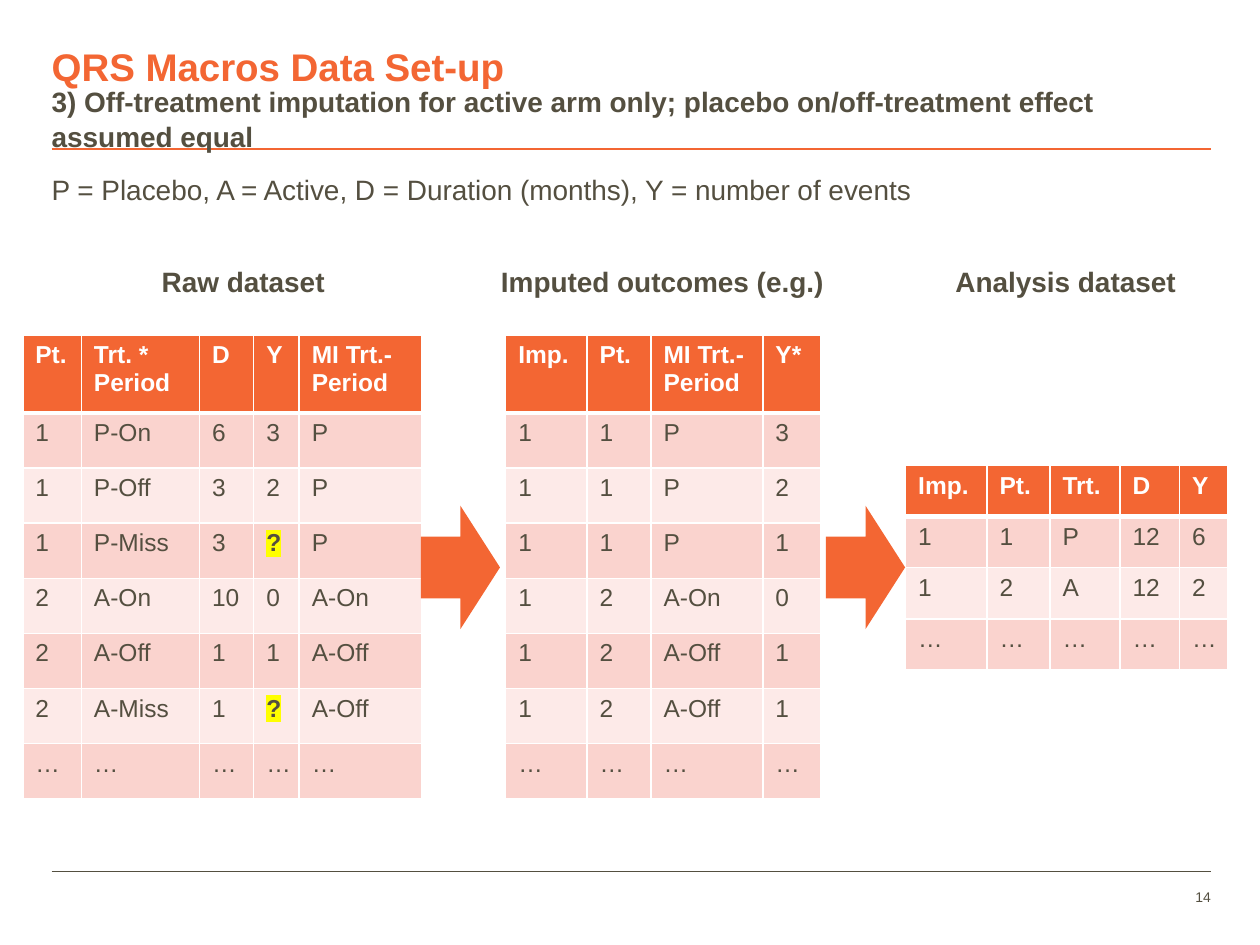
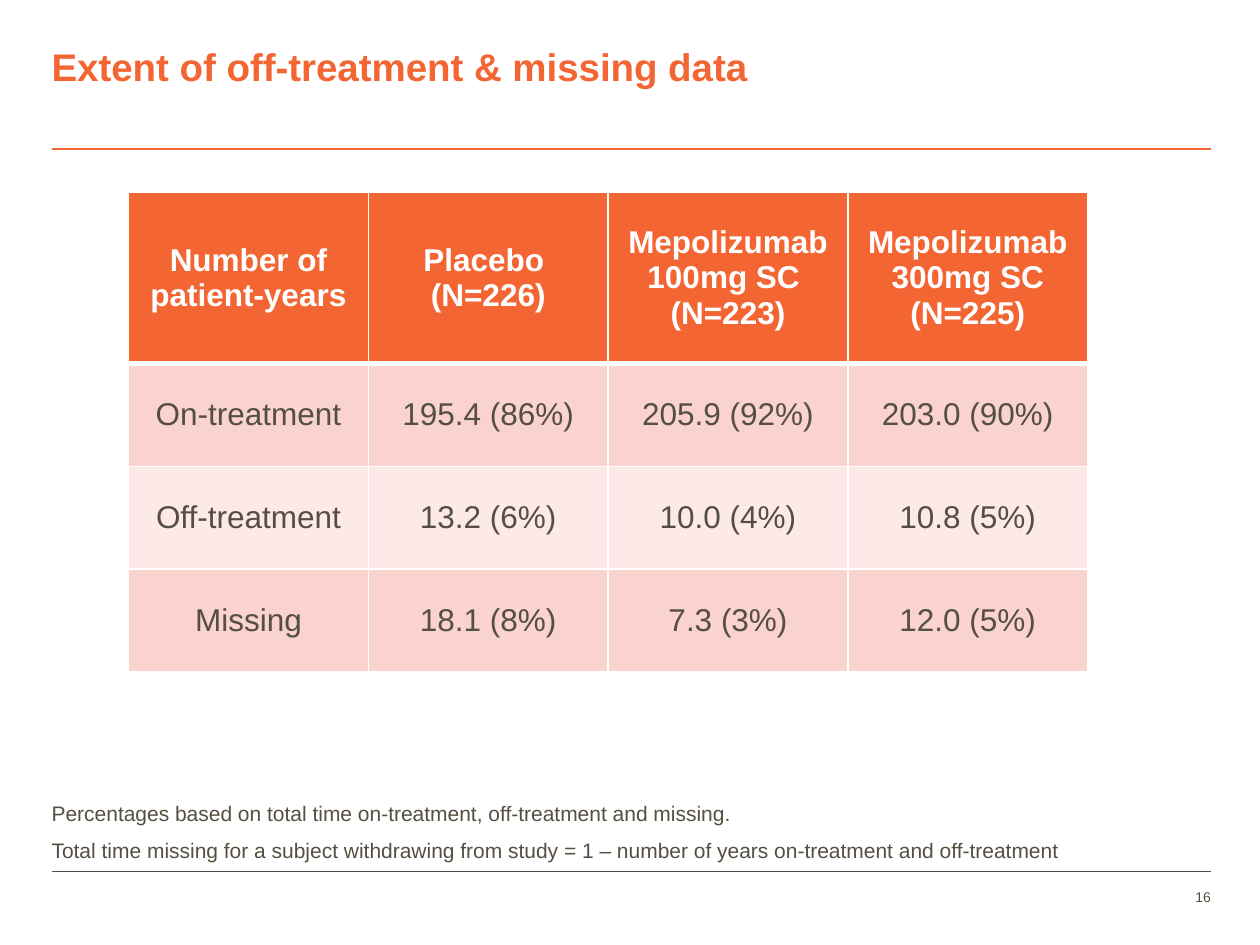
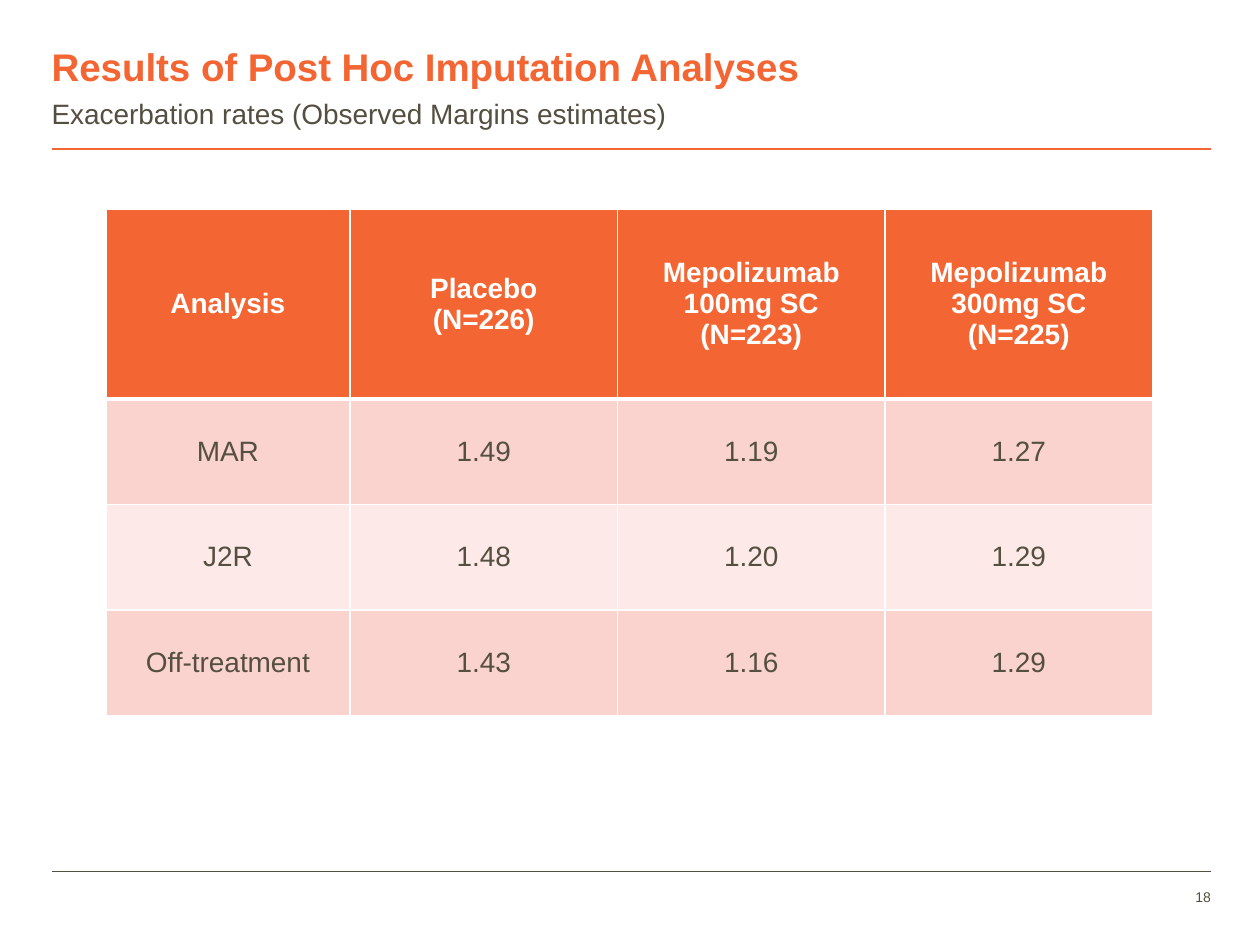
from lxml import etree
from pptx import Presentation
from pptx.dml.color import RGBColor
from pptx.enum import shapes, text
from pptx.oxml.ns import qn
from pptx.util import Pt

COLORS = {
    "orange": "F36633",
    "ink": "544F40",
    "white": "FFFFFF",
    "band": "FAD3CE",
    "band_light": "FDEAE8",
    "highlight": "FFFF00",
}
FONT = "Arial"
LEFT, RIGHT = 29.5, 692
ALIGN, ANCHOR = text.PP_ALIGN, text.MSO_ANCHOR


def write(tf, lines, size, color="ink", bold=False, align=ALIGN.LEFT, spacing=1.05, after=0):
    for i, line in enumerate(lines):
        p = tf.paragraphs[0] if i == 0 else tf.add_paragraph()
        p.alignment = align
        p.line_spacing = spacing
        p.space_before = Pt(0)
        p.space_after = Pt(after)
        r = p.add_run()
        r.text = line
        r.font.size = Pt(size)
        r.font.name = FONT
        r.font.bold = bold
        r.font.color.rgb = RGBColor.from_string(COLORS[color])


def frame(sp, anchor=ANCHOR.TOP, wrap=True):
    tf = sp.text_frame
    tf.margin_left = tf.margin_top = tf.margin_right = tf.margin_bottom = 0
    tf.word_wrap = wrap
    tf.vertical_anchor = anchor
    tf.auto_size = text.MSO_AUTO_SIZE.NONE
    return tf


slides = [
    {
        "title": "QRS Macros Data Set-up",
        "number": "14",
        "texts": [
            ((LEFT, 47.5, 616, 45), ["3) Off-treatment imputation for active arm only; "
             "placebo on/off-treatment effect assumed equal"], 16, True, "top"),
            ((LEFT, 98.5, 665, 19.5), ["P = Placebo, A = Active, D = Duration (months), "
             "Y = number of events"], 16, False, "bottom"),
            ((103, 150, 72, 26), ["Raw dataset"], 16, True, "label"),
            ((342.5, 150, 72, 26), ["Imputed outcomes (e.g.)"], 16, True, "label"),
            ((573, 150, 72, 26), ["Analysis dataset"], 16, True, "label"),
        ],
        "arrows": [240.5, 472],
        "tables": [
            {"at": (13, 191.5), "cols": [33.5, 67.5, 31, 26, 70], "heights": (44.5, 31.5),
             "size": 14, "centered": False, "rows": [
                 ["Pt.", "Trt. *\nPeriod", "D", "Y", "MI Trt.-\nPeriod"],
                 ["1", "P-On", "6", "3", "P"],
                 ["1", "P-Off", "3", "2", "P"],
                 ["1", "P-Miss", "3", "?", "P"],
                 ["2", "A-On", "10", "0", "A-On"],
                 ["2", "A-Off", "1", "1", "A-Off"],
                 ["2", "A-Miss", "1", "?", "A-Off"],
                 ["…"] * 5]},
            {"at": (289, 191.5), "cols": [46.5, 36.5, 64, 33], "heights": (44.5, 31.5),
             "size": 14, "centered": False, "rows": [
                 ["Imp.", "Pt.", "MI Trt.-\nPeriod", "Y*"],
                 ["1", "1", "P", "3"],
                 ["1", "1", "P", "2"],
                 ["1", "1", "P", "1"],
                 ["1", "2", "A-On", "0"],
                 ["1", "2", "A-Off", "1"],
                 ["1", "2", "A-Off", "1"],
                 ["…"] * 4]},
            {"at": (517.5, 266), "cols": [46.5, 36, 40, 34, 27.5], "heights": (29.2, 29.2),
             "size": 14, "centered": False, "rows": [
                 ["Imp.", "Pt.", "Trt.", "D", "Y"],
                 ["1", "1", "P", "12", "6"],
                 ["1", "2", "A", "12", "2"],
                 ["…"] * 5]},
        ],
    },
    {
        "title": "Extent of off-treatment & missing data",
        "number": "16",
        "texts": [
            ((LEFT, 458, 665, 35.2), [
                "Percentages based on total time on-treatment, off-treatment and missing.",
                "Total time missing for a subject withdrawing from study = 1 – number of years "
                "on-treatment and off-treatment"], 12, False, "bottom"),
        ],
        "arrows": [],
        "tables": [
            {"at": (73.5, 110), "cols": [137] * 4, "heights": (97.7, 58.8),
             "size": 18, "centered": True, "rows": [
                 ["Number of patient-years", "Placebo \n(N=226)",
                  "Mepolizumab 100mg SC \n(N=223)", "Mepolizumab 300mg SC\n(N=225)"],
                 ["On-treatment", "195.4 (86%)", "205.9 (92%)", "203.0 (90%)"],
                 ["Off-treatment", "13.2 (6%)", "10.0 (4%)", "10.8 (5%)"],
                 ["Missing", "18.1 (8%)", "7.3 (3%)", "12.0 (5%)"]]},
        ],
    },
    {
        "title": "Results of Post Hoc Imputation Analyses",
        "number": "18",
        "texts": [
            ((LEFT, 54.5, 598, 19), ["Exacerbation rates (Observed Margins estimates)"],
             16, False, "top"),
        ],
        "arrows": [],
        "tables": [
            {"at": (60.5, 119.5), "cols": [139.5] + [152.9] * 3, "heights": (108.5, 60.3),
             "size": 16, "centered": True, "rows": [
                 ["Analysis", "Placebo\n(N=226)", "Mepolizumab\n100mg SC\n(N=223)",
                  "Mepolizumab\n300mg SC\n(N=225)"],
                 ["MAR", "1.49", "1.19", "1.27"],
                 ["J2R", "1.48", "1.20", "1.29"],
                 ["Off-treatment", "1.43", "1.16", "1.29"]]},
        ],
    },
]

prs = Presentation()
prs.slide_width, prs.slide_height = Pt(720), Pt(540)

for page in slides:
    s = prs.slides.add_slide(prs.slide_layouts[5])

    for y, color in ((498, "ink"), (85, "orange")):
        rule = s.shapes.add_connector(
            shapes.MSO_CONNECTOR.STRAIGHT, Pt(LEFT), Pt(y), Pt(RIGHT), Pt(y))
        rule.line.color.rgb = RGBColor.from_string(COLORS[color])
        rule.line.width = Pt(1)
        etree.SubElement(rule._element.spPr, qn("a:effectLst"))

    title = s.shapes.title
    title.left, title.top, title.width, title.height = Pt(LEFT), Pt(23), Pt(596), Pt(26.6)
    write(frame(title), [page["title"]], 22, "orange", True)

    for grid in page["tables"]:
        rows, cols = grid["rows"], grid["cols"]
        first, other = grid["heights"]
        heights = [first] + [other] * (len(rows) - 1)
        x, y = grid["at"]
        table = s.shapes.add_table(len(rows), len(cols), Pt(x), Pt(y),
                                   Pt(sum(cols)), Pt(sum(heights))).table
        for c, width in enumerate(cols):
            table.columns[c].width = Pt(width)
        for i, row in enumerate(rows):
            table.rows[i].height = Pt(heights[i])
            fill = "orange" if i == 0 else "band" if i % 2 else "band_light"
            for c, value in enumerate(row):
                cell = table.cell(i, c)
                tcPr = cell._tc.get_or_add_tcPr()
                for side in "LRTB":
                    heavy = (i, side) in ((0, "B"), (1, "T"))
                    ln = etree.SubElement(tcPr, qn("a:ln" + side), w=str(Pt(3 if heavy else 1)))
                    solid = etree.SubElement(ln, qn("a:solidFill"))
                    etree.SubElement(solid, qn("a:srgbClr"), val=COLORS["white"])
                cell.fill.solid()
                cell.fill.fore_color.rgb = RGBColor.from_string(COLORS[fill])
                cell.vertical_anchor = ANCHOR.MIDDLE if grid["centered"] else ANCHOR.TOP
                write(cell.text_frame, value.split("\n"), grid["size"],
                      "white" if i == 0 else "ink", i == 0 or value == "?",
                      ALIGN.CENTER if grid["centered"] else ALIGN.LEFT, 1.0)
                if value == "?":
                    rPr = cell.text_frame.paragraphs[0].runs[0].font._element
                    mark = etree.Element(qn("a:highlight"))
                    etree.SubElement(mark, qn("a:srgbClr"), val=COLORS["highlight"])
                    rPr.find(qn("a:solidFill")).addnext(mark)

    for x in page["arrows"]:
        arrow = s.shapes.add_shape(shapes.MSO_SHAPE.RIGHT_ARROW, Pt(x), Pt(289), Pt(45.2), Pt(70.5))
        arrow.shadow.inherit = False
        arrow.fill.solid()
        arrow.fill.fore_color.rgb = RGBColor.from_string(COLORS["orange"])
        arrow.line.fill.background()

    for box, lines, size, bold, kind in page["texts"]:
        sp = s.shapes.add_textbox(*map(Pt, box))
        tf = frame(sp, ANCHOR.BOTTOM if kind == "bottom" else ANCHOR.TOP, kind != "label")
        write(tf, lines, size, bold=bold,
              align=ALIGN.CENTER if kind == "label" else ALIGN.LEFT,
              after=6 if kind == "bottom" else 0)

    number = s.shapes.add_textbox(Pt(626.5), Pt(507), Pt(65.5), Pt(29))
    write(frame(number), [page["number"]], 8, align=ALIGN.RIGHT)

prs.save("out.pptx")
